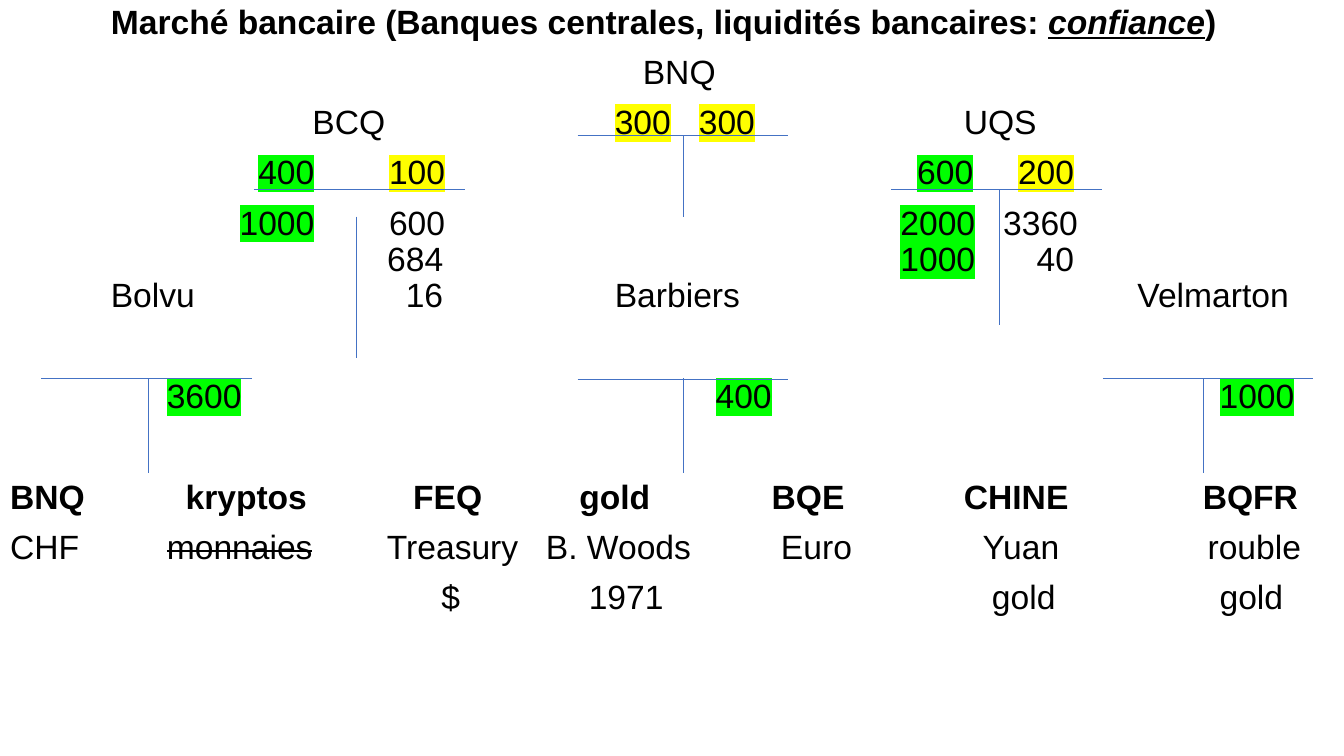
import pptx
import pptx.util
import pptx.dml.color
import pptx.enum.dml
import pptx.enum.shapes
import pptx.enum.text
import pptx.oxml.ns
from lxml import etree

Pt = pptx.util.Pt
MARGIN = 7.2
BAR_WIDTH = 150.5
LINE_HEIGHT = 25.9
GREEN = "00FF00"
YELLOW = "FFFF00"

STYLES = {
    "plain": {},
    "bold": {"bold": True},
    "trust": {"bold": True, "italic": True, "underline": True},
    "green": {"highlight": GREEN},
    "yellow": {"highlight": YELLOW},
    "struck": {"strike": "sngStrike"},
}

ROWS = [
    (0, [(79.2, "Marché bancaire (Banques centrales, liquidités bancaires: ", "bold"),
         (None, "confiance", "trust"), (None, ")", "bold")]),
    (10, [(459.2, "BNQ", "plain")]),
    (10, [(223.2, "BCQ", "plain"), (439.2, "300", "yellow"),
          (499.2, "300", "yellow"), (688.5, "UQS", "plain")]),
    (10, [(184.5, "400", "green"), (277.9, "100", "yellow"),
          (655.2, "600", "green"), (727.2, "200", "yellow")]),
    (10, [(171.2, "1000", "green"), (277.9, "600", "plain"),
          (643.2, "2000", "green"), (716.6, "3360", "plain")]),
    (0, [(276.6, "684", "plain"), (643.2, "1000", "green"), (740.5, "40", "plain")]),
    (0, [(79.2, "Bolvu", "plain"), (289.9, "16", "plain"),
         (439.2, "Barbiers", "plain"), (812.5, "Velmarton", "plain")]),
    (46, [(119.2, "3600", "green"), (511.2, "400", "green"), (871.2, "1000", "green")]),
    (46, [(None, "BNQ", "bold"), (132.6, "kryptos", "bold"), (295.2, "FEQ", "bold"),
          (413.9, "gold", "bold"), (551.2, "BQE", "bold"),
          (688.5, "CHINE", "bold"), (859.2, "BQFR", "bold")]),
    (10, [(None, "CHF", "plain"), (119.2, "monnaies", "struck"),
          (276.4, "Treasury", "plain"), (390, "B. Woods", "plain"),
          (557.9, "Euro", "plain"), (701.9, "Yuan", "plain"), (862.6, "rouble", "plain")]),
    (10, [(315.2, "$", "plain"), (420.6, "1971", "plain"),
          (708.6, "gold", "plain"), (871.2, "gold", "plain")]),
]

ACCOUNTS = [
    (412.6, 96.5, 488.2, 96.5, 154.8),
    (181.4, 135.4, 254.5, 154.8, 255.6),
    (636.5, 135.4, 713.5, 135.4, 231.8),
    (29.5, 270, 105.8, 270, 337.7),
    (412.6, 270.7, 488.2, 270, 337.7),
    (787.7, 270, 859.7, 270, 337.7),
]


def color(value):
    return pptx.dml.color.RGBColor.from_string(value)


def add_element(parent, tag, **attributes):
    return etree.SubElement(parent, pptx.oxml.ns.qn(tag), attributes)


def set_attributes(target, values):
    for name, value in values.items():
        setattr(target, name, value)


def add_run(paragraph, text, style):
    values = dict(STYLES[style])
    highlight = values.pop("highlight", None)
    strike = values.pop("strike", None)
    run = paragraph.add_run()
    run.text = text
    set_attributes(run.font, {"size": Pt(24), "name": "Arial", **values})
    run.font.color.rgb = color("000000")
    properties = run._r.get_or_add_rPr()
    if strike:
        properties.set("strike", strike)
    if highlight:
        mark = add_element(properties, "a:highlight")
        add_element(mark, "a:srgbClr", val=highlight)
        properties.find(pptx.oxml.ns.qn("a:solidFill")).addnext(mark)


def fill_row(paragraph, space_before, cells):
    set_attributes(paragraph, {
        "alignment": pptx.enum.text.PP_ALIGN.LEFT,
        "line_spacing": Pt(LINE_HEIGHT),
        "space_before": Pt(space_before),
    })
    tabs = add_element(paragraph._p.get_or_add_pPr(), "a:tabLst")
    for left, text, style in cells:
        if left is not None:
            add_element(tabs, "a:tab", pos=str(Pt(left - MARGIN)), algn="l")
            add_run(paragraph, "\t", "plain")
        add_run(paragraph, text, style)


def add_ledger(slide):
    shape = slide.shapes.add_textbox(Pt(MARGIN), Pt(3.3), Pt(945), Pt(440))
    frame = shape.text_frame
    set_attributes(frame, {
        "word_wrap": True, "margin_left": 0, "margin_right": 0,
        "margin_top": 0, "margin_bottom": 0,
    })
    for index, (space_before, cells) in enumerate(ROWS):
        paragraph = frame.add_paragraph() if index else frame.paragraphs[0]
        fill_row(paragraph, space_before, cells)


def add_line(slide, *ends):
    line = slide.shapes.add_connector(
        pptx.enum.shapes.MSO_CONNECTOR.STRAIGHT, *map(Pt, ends))
    line.line.width = Pt(0.5)
    line.line.color.rgb = color("4472C4")
    add_element(line._element.spPr, "a:effectLst")


def add_account(slide, left, bar, stem, top, bottom):
    add_line(slide, left, bar, left + BAR_WIDTH, bar)
    add_line(slide, stem, top, stem, bottom)


def main():
    presentation = pptx.Presentation()
    set_attributes(presentation, {"slide_width": Pt(960), "slide_height": Pt(540)})
    slide = presentation.slides.add_slide(presentation.slide_layouts[6])
    add_ledger(slide)
    for account in ACCOUNTS:
        add_account(slide, *account)
    presentation.save("out.pptx")


if __name__ == "__main__":
    main()
